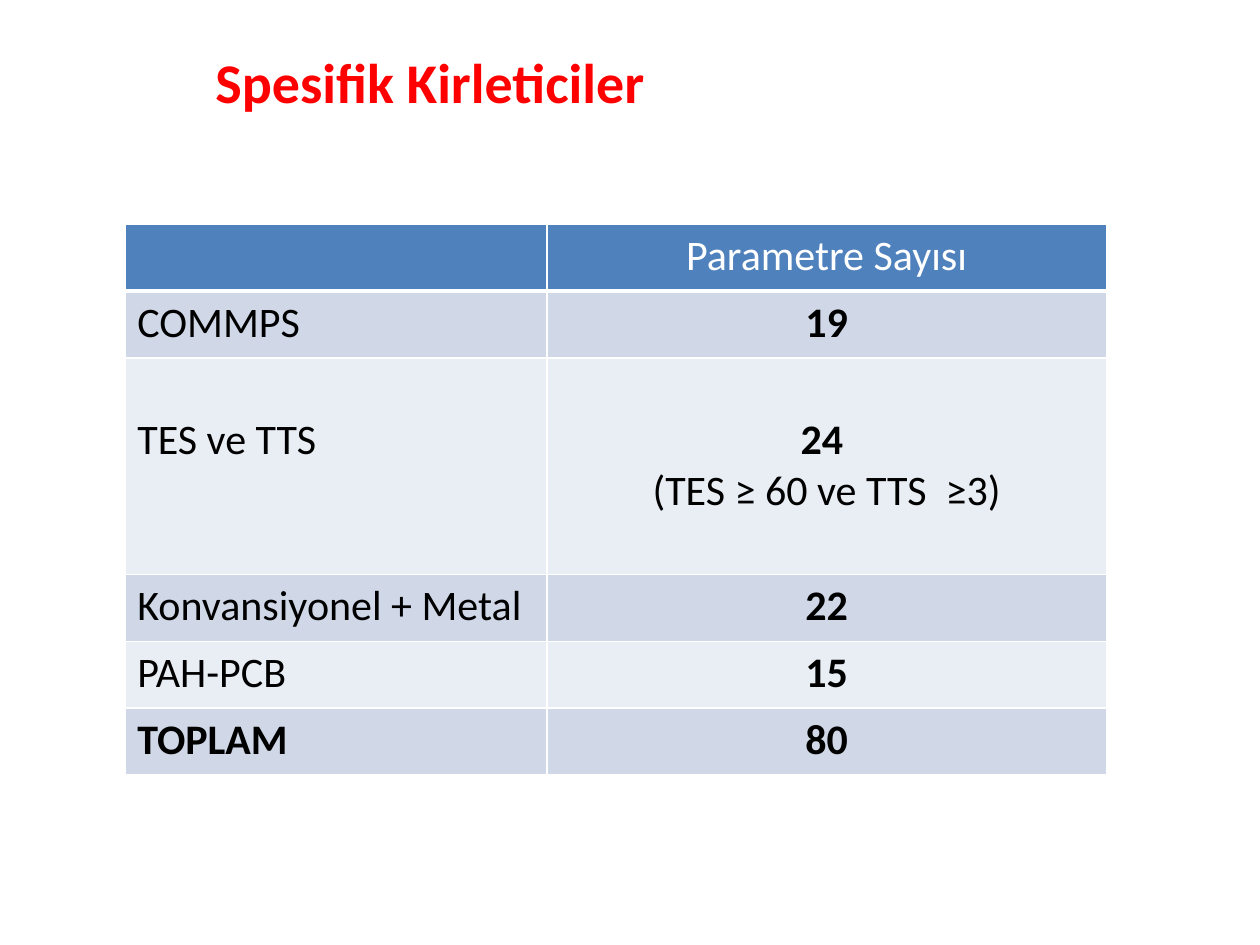
from dataclasses import dataclass

from pptx import Presentation
from pptx.dml.color import RGBColor
from pptx.enum.text import MSO_ANCHOR, PP_ALIGN
from pptx.oxml import parse_xml
from pptx.oxml.ns import nsdecls
from pptx.util import Inches, Pt


@dataclass(frozen=True)
class Theme:
    font: str = "Calibri"
    title_size: int = 32
    table_size: int = 24
    title: str = "FF0000"
    header: str = "4F81BD"
    header_text: str = "FFFFFF"
    body_text: str = "000000"
    bands: tuple = ("D0D8E8", "E9EDF4")
    border: str = "FFFFFF"


class SlideBuilder:
    def __init__(self, deck, theme):
        self.theme = theme
        self.page = deck.slides.add_slide(deck.slide_layouts[5])

    def style(self, paragraph, size, color, bold, align):
        paragraph.alignment = align
        for span in paragraph.runs:
            span.font.name = self.theme.font
            span.font.size = Pt(size)
            span.font.bold = bold
            span.font.color.rgb = RGBColor.from_string(color)

    def title(self, text, left, top, width, height):
        box = self.page.shapes.title
        box.left, box.top = Inches(left), Inches(top)
        box.width, box.height = Inches(width), Inches(height)
        box.text_frame.text = text
        box.text_frame.vertical_anchor = MSO_ANCHOR.MIDDLE
        self.style(box.text_frame.paragraphs[0], self.theme.title_size,
                   self.theme.title, True, PP_ALIGN.LEFT)

    def borders(self, cell, bottom):
        properties = cell._tc.get_or_add_tcPr()
        for side, points in (("L", 1), ("R", 1), ("T", 1), ("B", bottom)):
            properties.append(parse_xml(
                f'<a:ln{side} {nsdecls("a")} w="{Pt(points)}"><a:solidFill>'
                f'<a:srgbClr val="{self.theme.border}"/></a:solidFill></a:ln{side}>'))

    def cell(self, cell, text, fill, color, bold_lines, align, bottom):
        self.borders(cell, bottom)
        cell.fill.solid()
        cell.fill.fore_color.rgb = RGBColor.from_string(fill)
        cell.text_frame.text = text
        for number, paragraph in enumerate(cell.text_frame.paragraphs):
            self.style(paragraph, self.theme.table_size, color,
                       number < bold_lines, align)

    def table(self, rows, left, top, widths, heights):
        frame = self.page.shapes.add_table(
            len(rows), len(widths), Inches(left), Inches(top),
            Inches(sum(widths)), Inches(sum(heights)))
        table = frame.table
        for column, width in zip(table.columns, widths):
            column.width = Inches(width)
        for index, (label, value) in enumerate(rows):
            table.rows[index].height = Inches(heights[index])
            header = index == 0
            fill = self.theme.header if header else self.theme.bands[(index - 1) % 2]
            color = self.theme.header_text if header else self.theme.body_text
            bottom = 3 if header else 1
            total = index == len(rows) - 1
            self.cell(table.cell(index, 0), label, fill, color,
                      int(total), PP_ALIGN.LEFT, bottom)
            self.cell(table.cell(index, 1), value, fill, color,
                      int(not header), PP_ALIGN.CENTER, bottom)
        return table


def main():
    deck = Presentation()
    deck.slide_width, deck.slide_height = Inches(10), Inches(7.5)
    builder = SlideBuilder(deck, Theme())
    builder.title("Spesifik Kirleticiler", 1.61, 0.29, 4.58, 0.71)
    rows = [
        ("", "Parametre Sayısı"),
        ("COMMPS", "19"),
        ("TES ve TTS", "24 \n(TES ≥ 60 ve TTS  ≥3)"),
        ("Konvansiyonel + Metal", "22"),
        ("PAH-PCB", "15"),
        ("TOPLAM", "80"),
    ]
    criteria_row = 2
    heights = [0.53] * len(rows)
    heights[criteria_row] = 1.72
    table = builder.table(rows, 0.99, 1.78, (3.35, 4.44), heights)
    for cell in table.rows[criteria_row].cells:
        cell.margin_top = Inches(0.45)
    deck.save("out.pptx")


if __name__ == "__main__":
    main()
